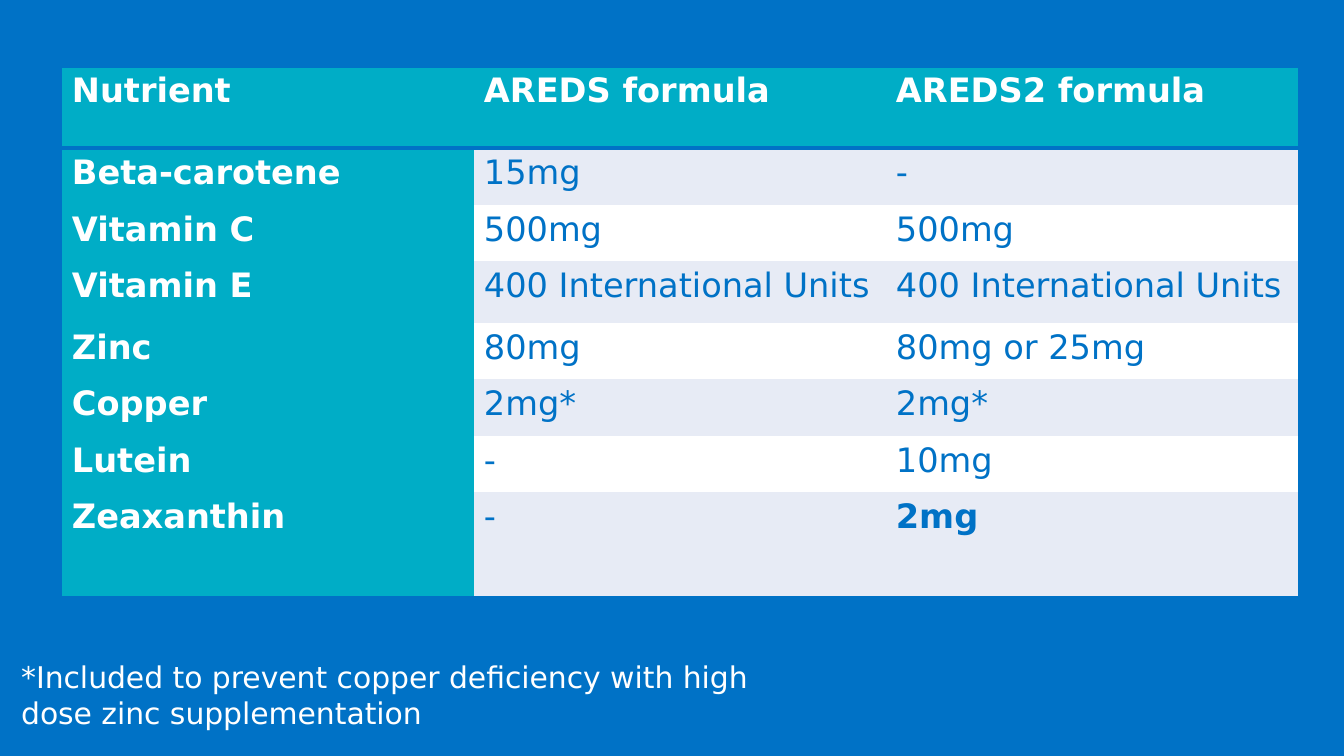
from lxml.etree import SubElement
from pptx import Presentation
from pptx.dml.color import RGBColor
from pptx.enum.text import MSO_ANCHOR
from pptx.oxml.ns import qn
from pptx.util import Emu, Pt

# Content
ROWS = [
    ("Nutrient", "AREDS formula", "AREDS2 formula"),
    ("Beta-carotene", "15mg", "-"),
    ("Vitamin C", "500mg", "500mg"),
    ("Vitamin E", "400 International Units", "400 International Units"),
    ("Zinc", "80mg", "80mg or 25mg"),
    ("Copper", "2mg*", "2mg*"),
    ("Lutein", "-", "10mg"),
    ("Zeaxanthin", "-", "2mg"),
]
FOOTNOTE = ("*Included to prevent copper deficiency with high "
            "dose zinc supplementation")

# Layout in px
WIDTH, HEIGHT = 1344, 756
TABLE_LEFT, TABLE_TOP, COL_WIDTH = 62, 66, 412
ROW_HEIGHTS = [82, 57, 56, 62, 56, 57, 56, 106]
FOOTNOTE_BOX = (8, 652, 801, 86)

BLUE, TEAL, PALE, WHITE = "0072C6", "00ADC6", "E7EBF5", "FFFFFF"
FONT = "DejaVu Sans"


def px(n):
    return Emu(round(n * 914400 / 134.4))


def color(hex_color):
    return RGBColor.from_string(hex_color)


def write(tf, text, size=18, fill=WHITE, bold=False, spacing=None, after=None):
    tf.word_wrap = True
    p = tf.paragraphs[0]
    if spacing:
        p.line_spacing = spacing
    if after is not None:
        p.space_after = Pt(after)
    r = p.add_run()
    r.text = text
    r.font.name, r.font.size, r.font.bold = FONT, Pt(size), bold
    r.font.color.rgb = color(fill)


def set_borders(cell, ruled):
    """Rule the named sides in blue and clear the others."""
    tc_pr = cell._tc.get_or_add_tcPr()
    for i, side in enumerate(("L", "R", "T", "B")):
        ln = SubElement(tc_pr, qn(f"a:ln{side}"))
        tc_pr.insert(i, ln)
        if side in ruled:
            ln.set("w", str(Pt(2)))
            solid = SubElement(ln, qn("a:solidFill"))
            SubElement(solid, qn("a:srgbClr")).set("val", BLUE)
        else:
            SubElement(ln, qn("a:noFill"))


prs = Presentation()
prs.slide_width, prs.slide_height = px(WIDTH), px(HEIGHT)
s = prs.slides.add_slide(prs.slide_layouts[6])
s.background.fill.solid()
s.background.fill.fore_color.rgb = color(BLUE)

# Nutrient table
n_cols, last = len(ROWS[0]), len(ROWS) - 1
table = s.shapes.add_table(
    len(ROWS), n_cols, px(TABLE_LEFT), px(TABLE_TOP),
    px(COL_WIDTH * n_cols), px(sum(ROW_HEIGHTS))).table
table.horz_banding = False
for col in table.columns:
    col.width = px(COL_WIDTH)

for i, (values, height) in enumerate(zip(ROWS, ROW_HEIGHTS)):
    table.rows[i].height = px(height)
    ruled = {0: "TB", 1: "T", last: "B"}.get(i, "")
    for j, text in enumerate(values):
        cell = table.cell(i, j)
        heading = i == 0 or j == 0
        cell.margin_left = cell.margin_right = px(10)
        cell.margin_top = cell.margin_bottom = 0
        cell.vertical_anchor = MSO_ANCHOR.TOP
        cell.fill.solid()
        cell.fill.fore_color.rgb = color(
            TEAL if heading else PALE if i % 2 else WHITE)
        set_borders(cell, ruled)
        write(cell.text_frame, text, fill=WHITE if heading else BLUE,
              bold=heading or (i, j) == (last, n_cols - 1),
              spacing=1.15, after=10)

# Footnote
box = s.shapes.add_textbox(*map(px, FOOTNOTE_BOX))
write(box.text_frame, FOOTNOTE, size=16)

prs.save("out.pptx")
